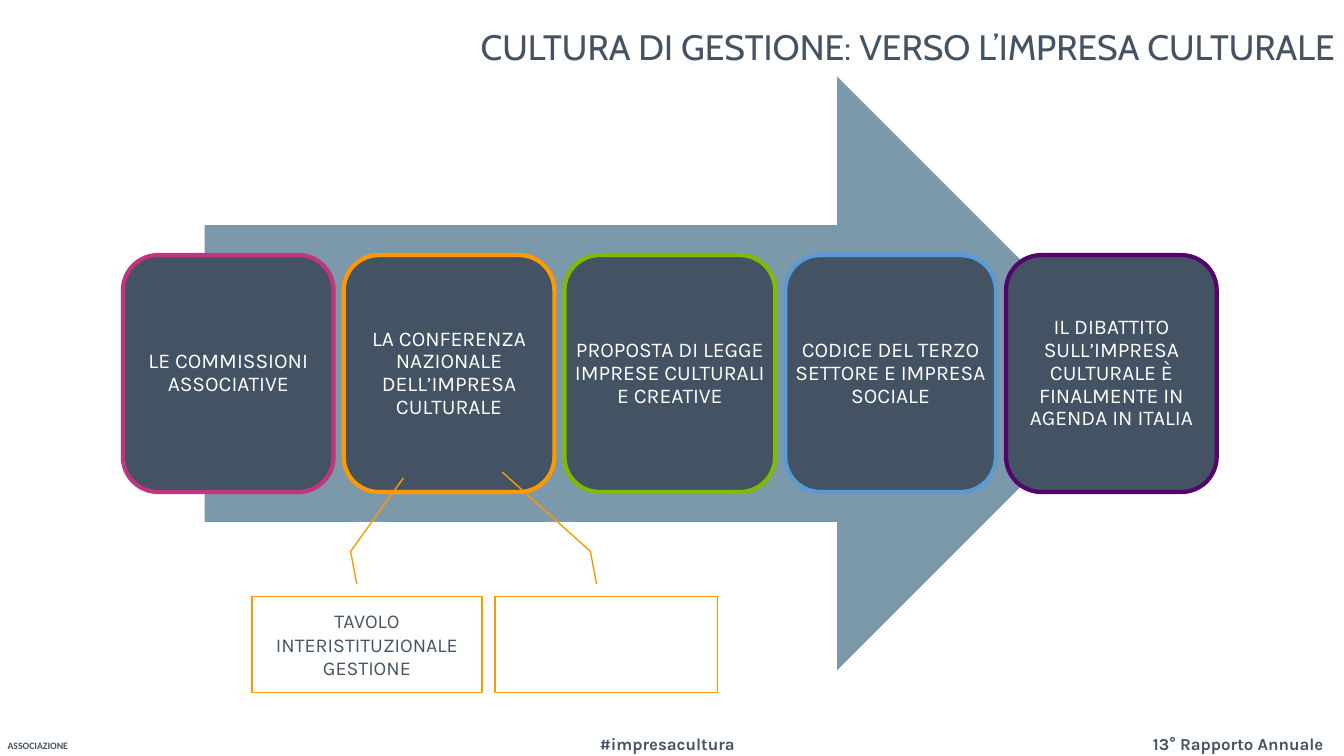
from pptx import Presentation
from pptx.dml.color import RGBColor
from pptx.enum import shapes, text
from pptx.util import Pt

SLATE = RGBColor(0x44, 0x53, 0x64)
STEEL = RGBColor(0x7C, 0x98, 0xAB)
WHITE = RGBColor(0xFF, 0xFF, 0xFF)
MAGENTA = RGBColor(0xC2, 0x34, 0x7E)
ORANGE = RGBColor(0xFF, 0x99, 0x00)
GREEN = RGBColor(0x7D, 0xBC, 0x00)
BLUE = RGBColor(0x5B, 0x9B, 0xD5)
PURPLE = RGBColor(0x53, 0x05, 0x6B)

LEFT, CENTER, RIGHT = text.PP_ALIGN.LEFT, text.PP_ALIGN.CENTER, text.PP_ALIGN.RIGHT
MIDDLE = text.MSO_ANCHOR.MIDDLE

TITLE = "CULTURA DI GESTIONE: VERSO L’IMPRESA CULTURALE"
STEPS = [
    ("LE COMMISSIONI ASSOCIATIVE", MAGENTA),
    ("LA CONFERENZA NAZIONALE DELL’IMPRESA CULTURALE", ORANGE),
    ("PROPOSTA DI LEGGE IMPRESE CULTURALI E CREATIVE", GREEN),
    ("CODICE DEL TERZO SETTORE E IMPRESA SOCIALE", BLUE),
    ("IL DIBATTITO SULL’IMPRESA CULTURALE È FINALMENTE IN AGENDA IN ITALIA", PURPLE),
]
CALLOUTS = [
    ("TAVOLO INTERISTITUZIONALE GESTIONE", 180, 164.2, (-1.241, 0.659)),
    ("", 353.5, 159.1, (-1.301, 0.033)),
]
FOOTERS = [
    ("ASSOCIAZIONE", (-7.2, 524.9, 68.4, 15.8), "Calibri", 7, CENTER, True),
    ("#impresacultura", (421.2, 520.6, 117.4, 21.6), "Karla", 12, LEFT, False),
    ("13° Rapporto Annuale", (816.5, 520.6, 147.6, 21.6), "Karla", 12, LEFT, False),
]
CARD_LEFT, CARD_TOP, CARD_WIDTH, CARD_HEIGHT = 87.8, 182.2, 150.5, 169.2
CARD_STEP = 157.7

deck = Presentation()
deck.slide_width, deck.slide_height = Pt(960), Pt(540)
slide = deck.slides.add_slide(deck.slide_layouts[6])


def write(frame, words, font, size, color, align, bold=False):
    paragraph = frame.paragraphs[0]
    paragraph.alignment = align
    run = paragraph.add_run()
    run.text = words
    run.font.name, run.font.size, run.font.bold = font, Pt(size), bold
    run.font.color.rgb = color
    return paragraph


def add_text(box, words, font, size, color, align, bold=False, wrap=True):
    frame = slide.shapes.add_textbox(*map(Pt, box)).text_frame
    frame.word_wrap = wrap
    return frame, write(frame, words, font, size, color, align, bold)


def add_figure(kind, box, fill=None, line=None, weight=1):
    figure = slide.shapes.add_shape(kind, *map(Pt, box))
    figure.shadow.inherit = False
    if fill is None:
        figure.fill.background()
    else:
        figure.fill.solid()
        figure.fill.fore_color.rgb = fill
    if line is None:
        figure.line.fill.background()
    else:
        figure.line.color.rgb = line
        figure.line.width = Pt(weight)
    return figure


for words, box, font, size, align, wrap in FOOTERS:
    add_text(box, words, font, size, SLATE, align, True, wrap)

title_frame, title_line = add_text((272.2, 15.1, 688.3, 39.6), TITLE, "Cabin", 25.2, SLATE, RIGHT)
title_frame.vertical_anchor = MIDDLE
title_line.line_spacing = 0.9

add_figure(shapes.MSO_SHAPE.RIGHT_ARROW, (146.2, 54.7, 663.8, 424.1), STEEL)

for index, (words, color) in enumerate(STEPS):
    box = (CARD_LEFT + index * CARD_STEP, CARD_TOP, CARD_WIDTH, CARD_HEIGHT)
    add_figure(shapes.MSO_SHAPE.ROUNDED_RECTANGLE, box, SLATE, color, 3)
    frame, label = add_text(box, words, "Karla", 15, WHITE, CENTER)
    frame.vertical_anchor = MIDDLE
    frame.margin_left = frame.margin_right = frame.margin_top = frame.margin_bottom = Pt(4.5)
    label.line_spacing = 0.9

for words, left, width, tip in CALLOUTS:
    callout = add_figure(shapes.MSO_SHAPE.LINE_CALLOUT_2, (left, 426.2, width, 68.4), line=ORANGE)
    for index, value in enumerate((-0.134, 0.456, -0.473, 0.429) + tip):
        callout.adjustments[index] = value
    if words:
        callout.text_frame.word_wrap = True
        callout.text_frame.vertical_anchor = MIDDLE
        write(callout.text_frame, words, "Karla", 14, SLATE, CENTER)

deck.save("out.pptx")
